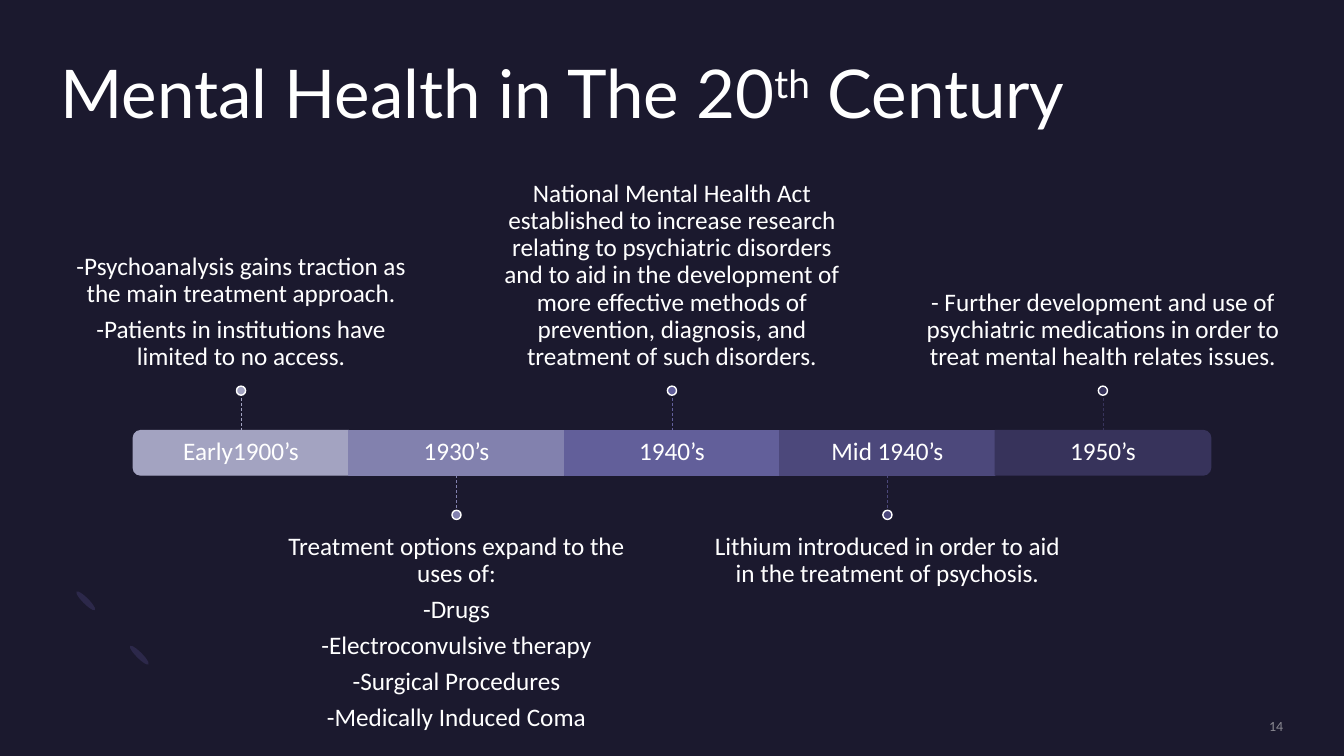
from dataclasses import dataclass

from lxml import etree
from pptx import Presentation
from pptx.dml.color import RGBColor
from pptx.enum.dml import MSO_LINE
from pptx.enum.shapes import MSO_CONNECTOR, MSO_SHAPE
from pptx.enum.text import MSO_ANCHOR, PP_ALIGN
from pptx.oxml.ns import qn
from pptx.util import Cm, Pt

ELLIPSE, RECTANGLE = MSO_SHAPE.OVAL, MSO_SHAPE.RECTANGLE
ROUND_TOP = MSO_SHAPE.ROUND_2_SAME_RECTANGLE
STRAIGHT, DASH = MSO_CONNECTOR.STRAIGHT, MSO_LINE.DASH
TOP, MIDDLE, BOTTOM = MSO_ANCHOR.TOP, MSO_ANCHOR.MIDDLE, MSO_ANCHOR.BOTTOM
LEFT, CENTER, RIGHT = PP_ALIGN.LEFT, PP_ALIGN.CENTER, PP_ALIGN.RIGHT


@dataclass(frozen=True)
class Theme:
    background: str = "1B192E"
    text: str = "FFFFFF"
    muted: str = "8A8992"
    petal: str = "2C284A"
    arc: str = "7771B2"
    title_font: str = "Lato"
    body_font: str = "Calibri"
    title_size: int = 48
    body_size: int = 18
    number_size: int = 10


THEME = Theme()
BAR_LEFT, BAR_TOP, BAR_HEIGHT, STEP = 3.36, 10.85, 1.12, 5.43
STEM, DOT = 0.89, 0.23
NOTE_WIDTH, NOTE_HEIGHT, INSET = 9.07, 3.86, 0.38

PERIODS = [
    ("Early1900’s", "A3A3C1", [
        "-Psychoanalysis gains traction as the main treatment approach.",
        "-Patients in institutions have limited to no access."]),
    ("1930’s", "8281AE", [
        "Treatment options expand to the uses of:", "-Drugs",
        "-Electroconvulsive therapy", "-Surgical Procedures",
        "-Medically Induced Coma"]),
    ("1940’s", "625F9A", [
        "National Mental Health Act established to increase research relating "
        "to psychiatric disorders and to aid in the development of more "
        "effective methods of prevention, diagnosis, and treatment of such "
        "disorders."]),
    ("Mid 1940’s", "4C487B", [
        "Lithium introduced in order to aid in the treatment of psychosis."]),
    ("1950’s", "37335B", [
        "- Further development and use of psychiatric medications in order to "
        "treat mental health relates issues."]),
]

ARC_EDGES = [
    [(1.93, 16.74), (1.42, 16.23), (1.47, 15.37), (2.06, 14.78)],
    [(2.51, 15.24), (2.21, 15.52), (2.18, 15.98), (2.44, 16.21)],
    [(2.44, 16.21), (2.69, 16.46), (3.12, 16.43), (3.43, 16.15)],
    [(3.86, 16.61), (3.3, 17.17), (2.41, 17.25), (1.93, 16.74)],
]


def apply_format(target, values):
    for name, value in values.items():
        setattr(target, name, value)


def add_text(page, frame, paragraphs, anchor=TOP, align=CENTER, top=0, bottom=0,
             font=THEME.body_font, size=THEME.body_size, color=THEME.text,
             line_spacing=0.9, space_after=6.3):
    box = page.shapes.add_textbox(*map(Cm, frame))
    apply_format(box.text_frame, {
        "word_wrap": True, "vertical_anchor": anchor,
        "margin_left": 0, "margin_right": 0,
        "margin_top": Cm(top), "margin_bottom": Cm(bottom)})
    for index, spans in enumerate(paragraphs):
        para = box.text_frame.paragraphs[0] if index == 0 else box.text_frame.add_paragraph()
        apply_format(para, {"alignment": align, "line_spacing": line_spacing,
                            "space_after": Pt(space_after)})
        for text, baseline in spans:
            span = para.add_run()
            span.text = text
            apply_format(span.font, {"name": font, "size": Pt(size)})
            span.font.color.rgb = RGBColor.from_string(color)
            if baseline:
                span.font._element.set("baseline", str(baseline * 1000))


def plain(*texts):
    return [[(text, 0)] for text in texts]


def paint(shape, fill, line=None):
    shape.shadow.inherit = False
    shape.fill.solid()
    shape.fill.fore_color.rgb = RGBColor.from_string(fill)
    if line:
        shape.line.color.rgb = RGBColor.from_string(line)
        shape.line.width = Pt(1)
    else:
        shape.line.fill.background()


def add_centred(page, kind, center_x, center_y, width, height, fill, line=None, rotation=0):
    shape = page.shapes.add_shape(kind, Cm(center_x - width / 2), Cm(center_y - height / 2),
                                  Cm(width), Cm(height))
    shape.rotation = rotation
    paint(shape, fill, line)


def add_stem(page, x, start, end, color):
    stem = page.shapes.add_connector(STRAIGHT, Cm(x), Cm(start), Cm(x), Cm(end))
    apply_format(stem.line, {"width": Pt(0.5), "dash_style": DASH})
    stem.line.color.rgb = RGBColor.from_string(color)
    etree.SubElement(stem._element.spPr, qn("a:effectLst"))


def curve_points(controls, steps=12):
    weights = (1, 3, 3, 1)
    for step in range(steps + 1):
        t = step / steps
        yield tuple(Cm(sum(weight * (1 - t) ** (3 - k) * t ** k * point[axis]
                           for k, (weight, point) in enumerate(zip(weights, controls))))
                    for axis in (0, 1))


def add_soft_arc(page):
    points = [point for edge in ARC_EDGES for point in curve_points(edge)]
    builder = page.shapes.build_freeform(*points[0])
    builder.add_line_segments(points[1:], close=True)
    arc = builder.convert_to_shape()
    paint(arc, THEME.arc)
    properties = arc._element.spPr
    color = properties.find(qn("a:solidFill")).find(qn("a:srgbClr"))
    etree.SubElement(color, qn("a:alpha"), val="20000")
    effects = properties.find(qn("a:effectLst"))
    etree.SubElement(effects, qn("a:softEdge"), rad="112500")


def add_period(page, index, label, color, notes):
    last = len(PERIODS) - 1
    left = BAR_LEFT + index * STEP
    center, middle = left + STEP / 2, BAR_TOP + BAR_HEIGHT / 2
    if index in (0, last):
        add_centred(page, ROUND_TOP, center, middle, BAR_HEIGHT, STEP, color, color,
                    270 if index == 0 else 90)
    else:
        add_centred(page, RECTANGLE, center, middle, STEP, BAR_HEIGHT, color, color)
    add_text(page, (left, BAR_TOP, STEP, BAR_HEIGHT), plain(label), MIDDLE,
             top=INSET, bottom=INSET)

    above = index % 2 == 0
    edge = BAR_TOP if above else BAR_TOP + BAR_HEIGHT
    direction = -1 if above else 1
    tip = edge + direction * STEM
    note_left = center - NOTE_WIDTH / 2
    if above:
        add_text(page, (note_left, 5.87, NOTE_WIDTH, NOTE_HEIGHT), plain(*notes),
                 BOTTOM, bottom=INSET)
    else:
        add_text(page, (note_left, 13.06, NOTE_WIDTH, NOTE_HEIGHT), plain(*notes), top=INSET)
    add_stem(page, center, edge, tip, color)
    add_centred(page, ELLIPSE, center, tip + direction * DOT / 2, DOT, DOT, color, THEME.text)


def main():
    deck = Presentation()
    apply_format(deck, {"slide_width": Cm(33.87), "slide_height": Cm(19.05)})
    page = deck.slides.add_slide(deck.slide_layouts[6])
    page.background.fill.solid()
    page.background.fill.fore_color.rgb = RGBColor.from_string(THEME.background)

    for x, y in ((3.51, 16.51), (2.16, 15.14)):
        add_centred(page, ELLIPSE, x, y, 0.15, 0.66, THEME.petal, rotation=135)
    add_soft_arc(page)
    add_text(page, (1.52, 1.52, 30.81, 3.71),
             [[("Mental Health in The 20", 0), ("th", 30), (" Century", 0)]],
             align=LEFT, font=THEME.title_font, size=THEME.title_size, space_after=0)
    for index, period in enumerate(PERIODS):
        add_period(page, index, *period)
    add_text(page, (27.64, 18.08, 4.7, 0.43), plain("14"), MIDDLE, RIGHT,
             size=THEME.number_size, color=THEME.muted, line_spacing=1, space_after=0)
    deck.save("out.pptx")


if __name__ == "__main__":
    main()
